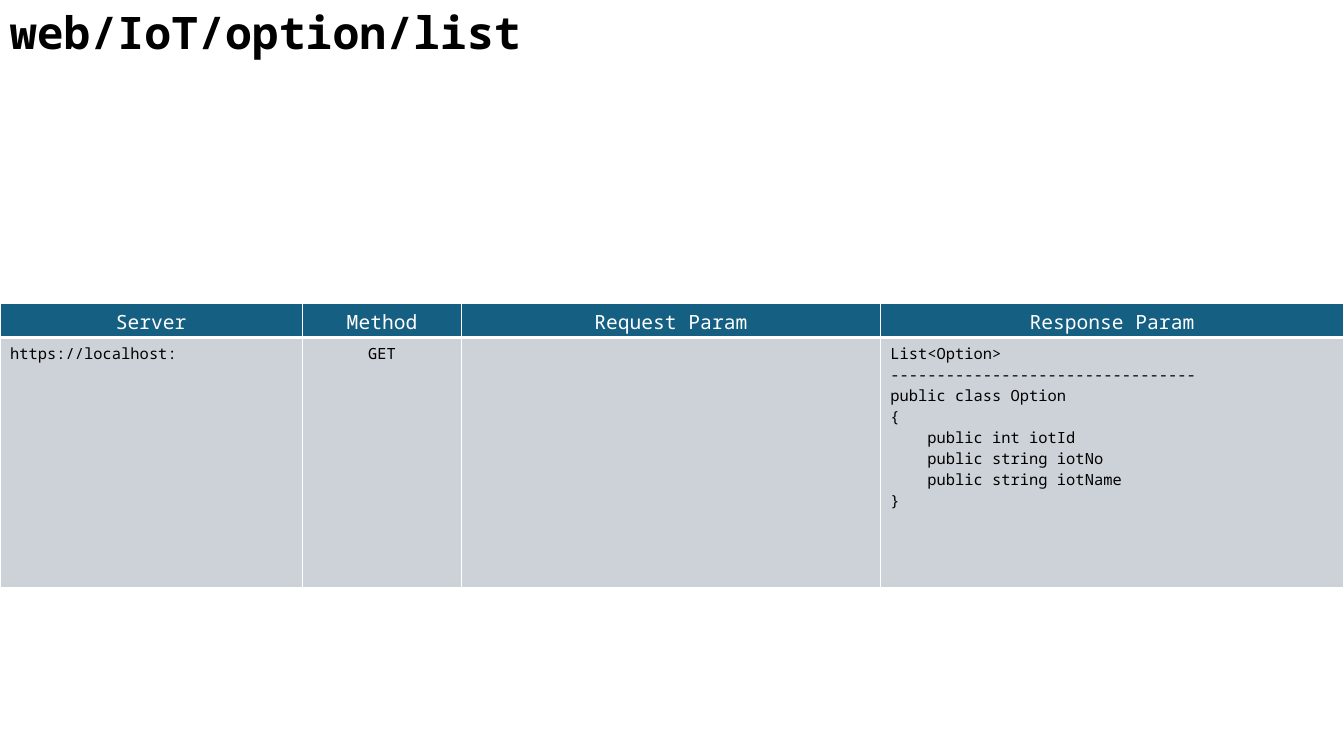
"""Build the API reference slide for web/IoT/option/list."""
import lxml.etree
import pptx
import pptx.dml.color
import pptx.enum.text
import pptx.oxml.ns
import pptx.util

Inches = pptx.util.Inches
Pt = pptx.util.Pt
ALIGN = pptx.enum.text.PP_ALIGN
COLORS = {"text": "000000", "white": "FFFFFF", "header": "156082", "body": "CCD2D8"}
TITLE = {"size": Pt(32), "bold": True}
HEADER = {"size": Pt(14), "bold": False}
BODY = {"size": Pt(11), "bold": False}
OPTION_CLASS = """List<Option>
---------------------------------
public class Option
{
    public int iotId
    public string iotNo
    public string iotName
}"""


class Deck:
    """Hold the style and the current slide."""

    def __init__(self, prs, font):
        self.font = font
        self.s = prs.slides.add_slide(prs.slide_layouts[6])

    def fill_text(self, tf, text, formats, color, align=ALIGN.LEFT):
        """Fill a text frame, one paragraph per line."""
        tf.text = text
        for p in tf.paragraphs:
            p.alignment = align
            for font in [p.font] + [r.font for r in p.runs]:
                for name, value in {"name": self.font, **formats}.items():
                    setattr(font, name, value)
                font.color.rgb = pptx.dml.color.RGBColor.from_string(COLORS[color])

    def text(self, left, top, width, height, text, formats):
        """Add a text box."""
        tf = self.s.shapes.add_textbox(*map(Inches, (left, top, width, height))).text_frame
        tf.word_wrap = True
        tf.auto_size = pptx.enum.text.MSO_AUTO_SIZE.SHAPE_TO_FIT_TEXT
        self.fill_text(tf, text, formats, "text")

    def border(self, cell, sides):
        """Draw white cell borders with the given widths in points."""
        tcPr = cell._tc.get_or_add_tcPr()
        qn = pptx.oxml.ns.qn
        for i, (side, width) in enumerate(sides.items()):
            ln = lxml.etree.Element(qn(f"a:ln{side}"), w=str(Pt(width)))
            fill = lxml.etree.SubElement(ln, qn("a:solidFill"))
            lxml.etree.SubElement(fill, qn("a:srgbClr"), val=COLORS["white"])
            tcPr.insert(i, ln)

    def table(self, left, top, widths, heights, rows, aligns):
        """Add a table whose first row is the header."""
        box = map(Inches, (left, top, sum(widths), sum(heights)))
        table = self.s.shapes.add_table(len(rows), len(widths), *box).table
        for col, width in zip(table.columns, widths):
            col.width = Inches(width)
        for row, height in zip(table.rows, heights):
            row.height = Inches(height)
        for i, row in enumerate(rows):
            fill, color, formats = ("body", "text", BODY) if i else ("header", "white", HEADER)
            for j, text in enumerate(row):
                cell = table.cell(i, j)
                cell.fill.solid()
                cell.fill.fore_color.rgb = pptx.dml.color.RGBColor.from_string(COLORS[fill])
                self.border(cell, {"L": 1, "R": 1, "T": 3 if i == 1 else 1, "B": 1 if i else 3})
                self.fill_text(cell.text_frame, text, formats, color,
                               aligns[j] if i else ALIGN.CENTER)


def main():
    """Build and save the slide."""
    prs = pptx.Presentation()
    prs.slide_width, prs.slide_height = Inches(13.33), Inches(7.5)
    deck = Deck(prs, "Noto Sans Mono")
    deck.text(0, 0, 9.45, 0.64, "web/IoT/option/list", TITLE)
    deck.table(
        0, 3.01, [3, 1.58, 4.15, 4.6], [0.34, 2.48],
        [["Server", "Method", "Request Param", "Response Param"],
         ["https://localhost:", "GET", "", OPTION_CLASS]],
        [ALIGN.LEFT, ALIGN.CENTER, ALIGN.LEFT, ALIGN.LEFT])
    prs.save("out.pptx")


if __name__ == "__main__":
    main()
